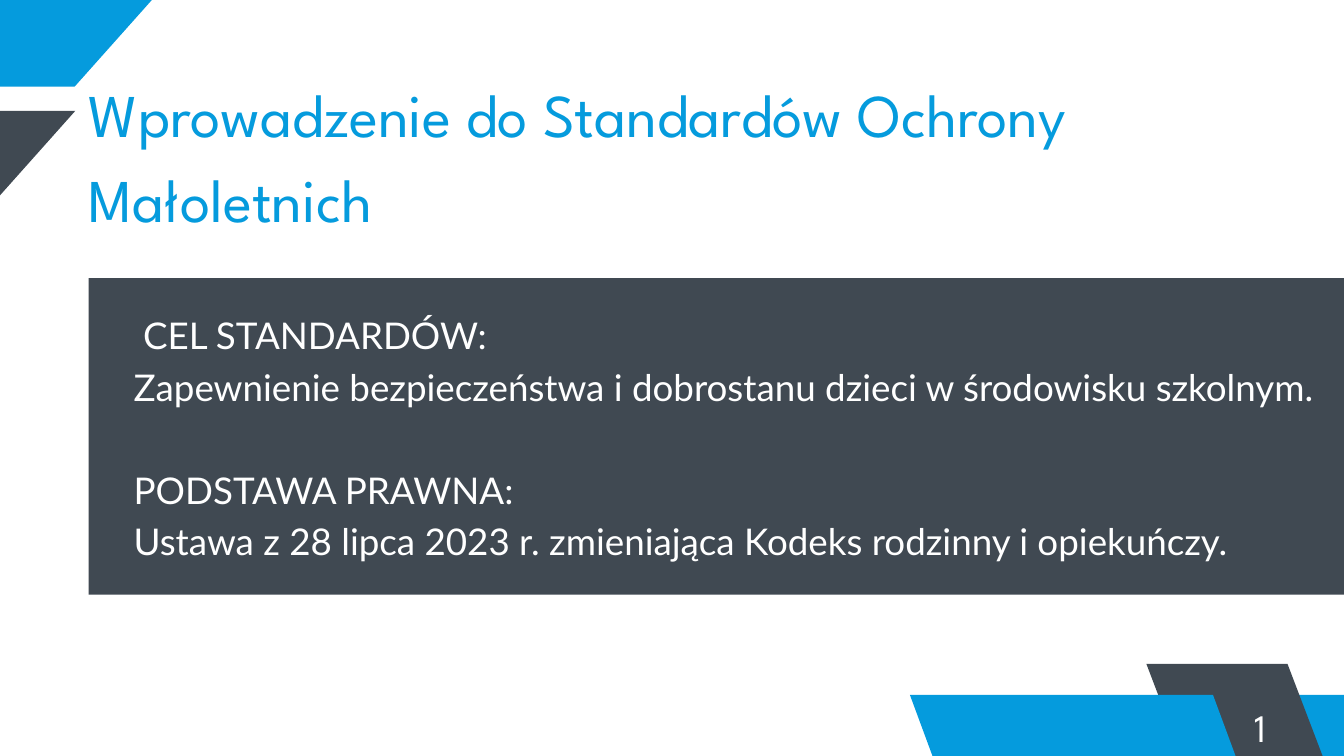
from pptx import Presentation
from pptx.dml.color import RGBColor
from pptx.enum.shapes import MSO_SHAPE
from pptx.enum.text import MSO_ANCHOR, MSO_AUTO_SIZE, PP_ALIGN
from pptx.util import Inches, Pt

BLUE = RGBColor(0x05, 0x9B, 0xDD)
SLATE = RGBColor(0x40, 0x49, 0x52)
WHITE = RGBColor(0xFF, 0xFF, 0xFF)
HEADING_FONT = "League Spartan"
BODY_FONT = "Lato"
RECTANGLE = MSO_SHAPE.RECTANGLE
TOP = MSO_ANCHOR.TOP
NO_AUTOFIT = MSO_AUTO_SIZE.NONE
LEFT, CENTER = PP_ALIGN.LEFT, PP_ALIGN.CENTER
TITLE_ONLY = 5

BODY_LEADING = 55.1
BODY_LINES = [
    " CEL STANDARDÓW:",
    "Zapewnienie bezpieczeństwa i dobrostanu dzieci w środowisku szkolnym.",
    "PODSTAWA PRAWNA:",
    "Ustawa z 28 lipca 2023 r. zmieniająca Kodeks rodzinny i opiekuńczy.",
]
LEGAL_BASIS = 2

# left, top, width, height, lean of the lower edge, colour
CORNER_BANDS = [
    (-0.42, 0, 2.68, 1.29, -1.15, BLUE),
    (-1.56, 1.65, 2.68, 1.29, -1.15, SLATE),
]
FOOTER_BANDS = [
    (17.93, 10.34, 3.79, 1.71, 0.74, BLUE),
    (17.06, 9.88, 2.1, 1.68, 0.64, SLATE),
    (13.54, 10.34, 4.51, 2.11, 0.78, BLUE),
]


def paint(shape, color):
    """Give a shape a flat fill without line or shadow."""
    shape.fill.solid()
    shape.fill.fore_color.rgb = color
    shape.line.fill.background()
    shape.shadow.inherit = False


def add_band(slide, left, top, width, height, lean, color):
    """Draw a slanted band whose lower edge is shifted by lean."""
    corners = [
        (left + width, top),
        (left + width + lean, top + height),
        (left + lean, top + height),
    ]
    outline = slide.shapes.build_freeform(Inches(left), Inches(top))
    outline.add_line_segments([(Inches(x), Inches(y)) for x, y in corners])
    paint(outline.convert_to_shape(), color)


def add_panel(slide, left, top, width, height):
    """Draw the dark panel behind the body text."""
    panel = slide.shapes.add_shape(
        RECTANGLE, Inches(left), Inches(top), Inches(width), Inches(height))
    paint(panel, SLATE)


def write(shape, lines, font, size, leading, color, align=LEFT):
    """Fill a text shape with lines in one style and no insets."""
    frame = shape.text_frame
    frame.text = "\n".join(lines)
    frame.word_wrap = True
    frame.auto_size = NO_AUTOFIT
    frame.vertical_anchor = TOP
    frame.margin_left = frame.margin_right = 0
    frame.margin_top = frame.margin_bottom = 0
    for paragraph in frame.paragraphs:
        paragraph.alignment = align
        paragraph.line_spacing = Pt(leading)
        for run in paragraph.runs:
            run.font.name = font
            run.font.size = Pt(size)
            run.font.color.rgb = color


def set_title(slide, text):
    """Place and format the title placeholder."""
    title = slide.shapes.title
    title.left, title.top = Inches(1.32), Inches(0.97)
    title.width, title.height = Inches(16.34), Inches(2.49)
    write(title, [text], HEADING_FONT, 65, 91, BLUE)


def add_text(slide, left, top, width, height, *style):
    """Add a text box written in the given style."""
    box = slide.shapes.add_textbox(
        Inches(left), Inches(top), Inches(width), Inches(height))
    write(box, *style)
    return box


def main():
    """Build the slide and save it."""
    presentation = Presentation()
    presentation.slide_width = Inches(20)
    presentation.slide_height = Inches(11.25)
    slide = presentation.slides.add_slide(
        presentation.slide_layouts[TITLE_ONLY])

    for band in CORNER_BANDS:
        add_band(slide, *band)
    add_panel(slide, 1.32, 4.14, 19.13, 4.71)
    set_title(slide, "Wprowadzenie do Standardów Ochrony Małoletnich")
    body = add_text(slide, 1.99, 4.55, 17.8, 3.79,
                    BODY_LINES, BODY_FONT, 39.4, BODY_LEADING, WHITE)
    body.text_frame.paragraphs[LEGAL_BASIS].space_before = Pt(BODY_LEADING)
    for band in FOOTER_BANDS:
        add_band(slide, *band)
    add_text(slide, 18.23, 10.35, 1.05, 0.78,
             ["1"], HEADING_FONT, 41.7, 58.3, WHITE, CENTER)

    presentation.save("out.pptx")


if __name__ == "__main__":
    main()
